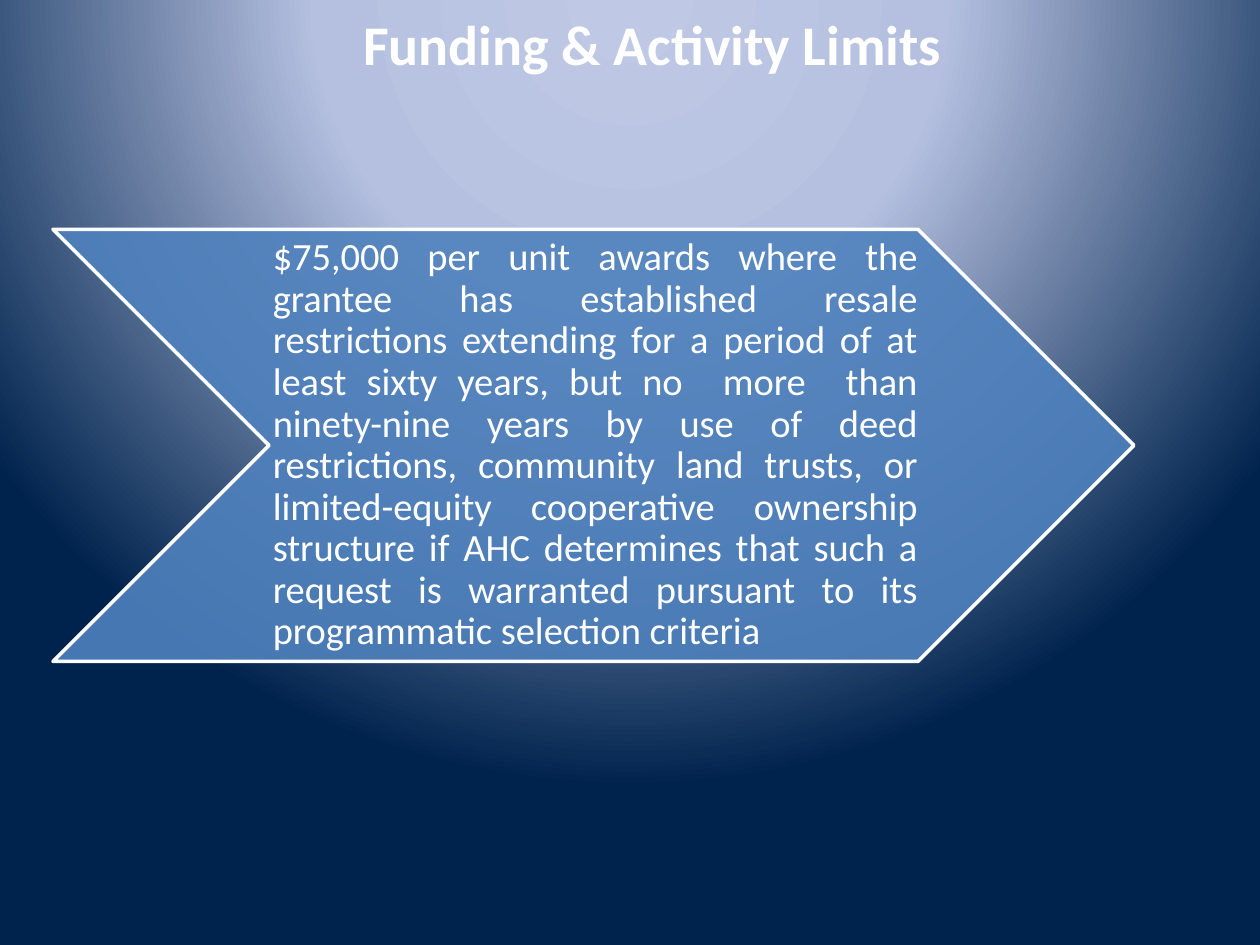
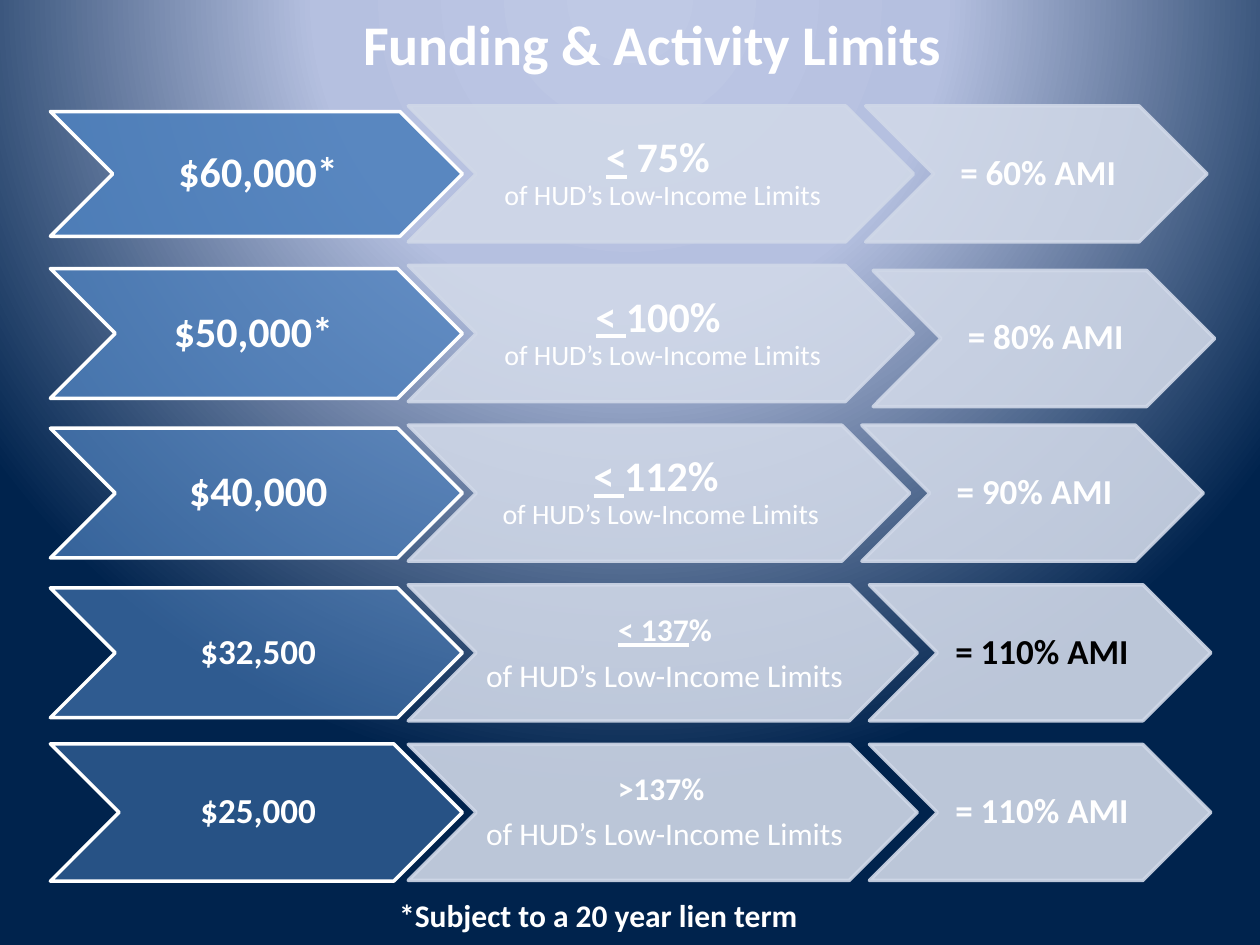
from dataclasses import dataclass

from pptx import Presentation
from pptx.dml.color import RGBColor
from pptx.enum.shapes import MSO_SHAPE as Shape
from pptx.enum.text import MSO_ANCHOR as Anchor, MSO_AUTO_SIZE as AutoSize, PP_ALIGN as Align
from pptx.oxml import parse_xml
from pptx.oxml.ns import nsdecls, qn
from pptx.util import Inches, Pt

FONT = "Calibri"
WHITE, BLACK, BLUE, PALE = "FFFFFF", "000000", "4F81BD", "D0D8E8"
GLOW = [(0, "BFC9E5"), (40, "B5C0E0"), (100, "00234D")]
TITLE = "Funding & Activity Limits"
HUD = "of HUD’s Low-Income Limits"
RESALE = (
    "$75,000 per unit awards where the grantee has established resale restrictions "
    "extending for a period of at least sixty years, but no  more  than ninety-nine years "
    "by use of deed restrictions, community land trusts, or limited-equity cooperative "
    "ownership structure if AHC determines that such a request is warranted pursuant to "
    "its programmatic selection criteria"
)
LEFT, LIMIT_LEFT, TOP, PITCH = 0.4, 3.24, 0.84, 1.267
AMOUNT_WIDTH, AMI_WIDTH, ROW_HEIGHT, OVERLAP = 3.27, 2.71, 1.08, 0.38


@dataclass
class Words:
    """A stretch of text in one style."""
    text: str
    size: int
    bold: bool = True
    underline: bool = False
    color: str = WHITE


@dataclass
class Tier:
    """One funding level, with the income limit that goes with it."""
    amount: Words
    amount_height: float
    opacity: int
    limit: list
    limit_width: float
    ami: Words
    spacing: float = 0
    ami_shift: tuple = (0, 0)


def large_limit(sign, percent):
    """Give the two lines of a limit in the large style."""
    return [[Words(sign, 24, underline=True), Words(percent, 24)], [Words(HUD, 16, bold=False)]]


def small_limit(*percent):
    """Give the two lines of a limit in the small style."""
    return [list(percent), [Words(HUD, 18, bold=False)]]


TIERS = [
    Tier(Words("$60,000*", 24), 0.99, 90, large_limit("<", " 75% "), 4.01,
         Words("= 60% AMI", 20)),
    Tier(Words("$50,000* ", 24), 1.03, 80, large_limit("< ", "100% "), 4.01,
         Words("= 80% AMI", 20), ami_shift=(0.06, 0.04)),
    Tier(Words("$40,000", 24), 1.03, 70, large_limit("< ", "112% "), 3.98,
         Words("= 90% AMI", 20)),
    Tier(Words("$32,500", 20), 1.03, 60,
         small_limit(Words(" ", 20), Words("< 137", 18, underline=True), Words("% ", 18)),
         4.04, Words("= 110% AMI", 20, color=BLACK), spacing=0.35),
    Tier(Words("$25,000", 20), 1.09, 50, small_limit(Words(">137% ", 18)), 4.04,
         Words("= 110% AMI", 20), spacing=0.35),
]


def rgb(color):
    """Turn a hex string into a colour."""
    return RGBColor.from_string(color)


def paint_background(master):
    """Give every slide the glow that falls from above the top edge."""
    master.background.fill.gradient()
    old = next(master.element.iter(qn("a:gradFill")))
    stops = "".join(
        f'<a:gs pos="{place * 1000}"><a:srgbClr val="{color}"/></a:gs>' for place, color in GLOW
    )
    glow = parse_xml(
        f'<a:gradFill {nsdecls("a")} rotWithShape="1"><a:gsLst>{stops}</a:gsLst>'
        '<a:path path="circle"><a:fillToRect l="50000" t="-80000" r="50000" b="180000"/>'
        "</a:path></a:gradFill>"
    )
    old.getparent().replace(old, glow)


def write(frame, lines, align=Align.CENTER, line_spacing=None, spacing=0):
    """Write lines of styled words into a text frame."""
    frame.word_wrap = True
    for number, line in enumerate(lines):
        paragraph = frame.add_paragraph() if number else frame.paragraphs[0]
        paragraph.alignment = align
        if line_spacing:
            paragraph.line_spacing = line_spacing
        paragraph.space_after = Pt(spacing * line[-1].size)
        for words in line:
            run = paragraph.add_run()
            run.text = words.text
            font = run.font
            font.name, font.size = FONT, Pt(words.size)
            font.bold, font.underline = words.bold, words.underline
            font.color.rgb = rgb(words.color)


def set_opacity(solid_fill, percent):
    """Make a solid fill partly transparent."""
    color = solid_fill.find(qn("a:srgbClr"))
    color.append(parse_xml(f'<a:alpha {nsdecls("a")} val="{percent * 1000}"/>'))


def add_label(slide, left, top, width, height, words):
    """Add a centred line of text that fits its box."""
    label = slide.shapes.add_textbox(Inches(left), Inches(top), Inches(width), Inches(height))
    label.text_frame.auto_size = AutoSize.SHAPE_TO_FIT_TEXT
    write(label.text_frame, [[words]])


def add_chevron(slide, left, top, width, height, lines, fill, edge,
                opacity=90, edge_opacity=100, align=Align.CENTER, spacing=0):
    """Add a see-through chevron with its text."""
    chevron = slide.shapes.add_shape(
        Shape.CHEVRON, Inches(left), Inches(top), Inches(width), Inches(height))
    chevron.shadow.inherit = False
    chevron.fill.solid()
    chevron.fill.fore_color.rgb = rgb(fill)
    chevron.line.color.rgb = rgb(edge)
    chevron.line.width = Pt(2)
    body, outline = chevron.element.spPr.iter(qn("a:solidFill"))
    set_opacity(body, opacity)
    if edge_opacity < 100:
        set_opacity(outline, edge_opacity)
    frame = chevron.text_frame
    frame.vertical_anchor = Anchor.MIDDLE
    frame.margin_left, frame.margin_right = Inches(0.03), 0
    frame.margin_top = frame.margin_bottom = Inches(0.02)
    write(frame, lines, align, 0.9, spacing)


def add_tier(slide, tier, top):
    """Add the amount, limit and AMI chevrons of one tier."""
    amount_top = top + (ROW_HEIGHT - tier.amount_height) / 2
    add_chevron(slide, LEFT, amount_top, AMOUNT_WIDTH, tier.amount_height,
                [[tier.amount]], BLUE, WHITE, tier.opacity)
    add_chevron(slide, LIMIT_LEFT, top, tier.limit_width, ROW_HEIGHT,
                tier.limit, PALE, PALE, edge_opacity=90, spacing=tier.spacing)
    right, down = tier.ami_shift
    ami_left = LIMIT_LEFT + tier.limit_width - OVERLAP + right
    add_chevron(slide, ami_left, top + down, AMI_WIDTH, ROW_HEIGHT,
                [[tier.ami]], PALE, PALE, edge_opacity=90)


def add_titled_slide(deck):
    """Add a blank slide with the shared title."""
    slide = deck.slides.add_slide(deck.slide_layouts[6])
    add_label(slide, 1.18, 0.03, 8, 0.64, Words(TITLE, 32))
    return slide


def main():
    """Build the deck and save it."""
    deck = Presentation()
    deck.slide_width, deck.slide_height = Inches(10), Inches(7.5)
    paint_background(deck.slide_master)

    resale = add_titled_slide(deck)
    add_chevron(resale, 0.42, 1.82, 8.58, 3.43, [[Words(RESALE, 22, bold=False)]],
                BLUE, WHITE, align=Align.JUSTIFY)

    limits = add_titled_slide(deck)
    for row, tier in enumerate(TIERS):
        add_tier(limits, tier, TOP + row * PITCH)
    add_label(limits, 2.25, 7.06, 5, 0.4, Words("*Subject to a 20 year lien term", 18))

    deck.save("out.pptx")


if __name__ == "__main__":
    main()
